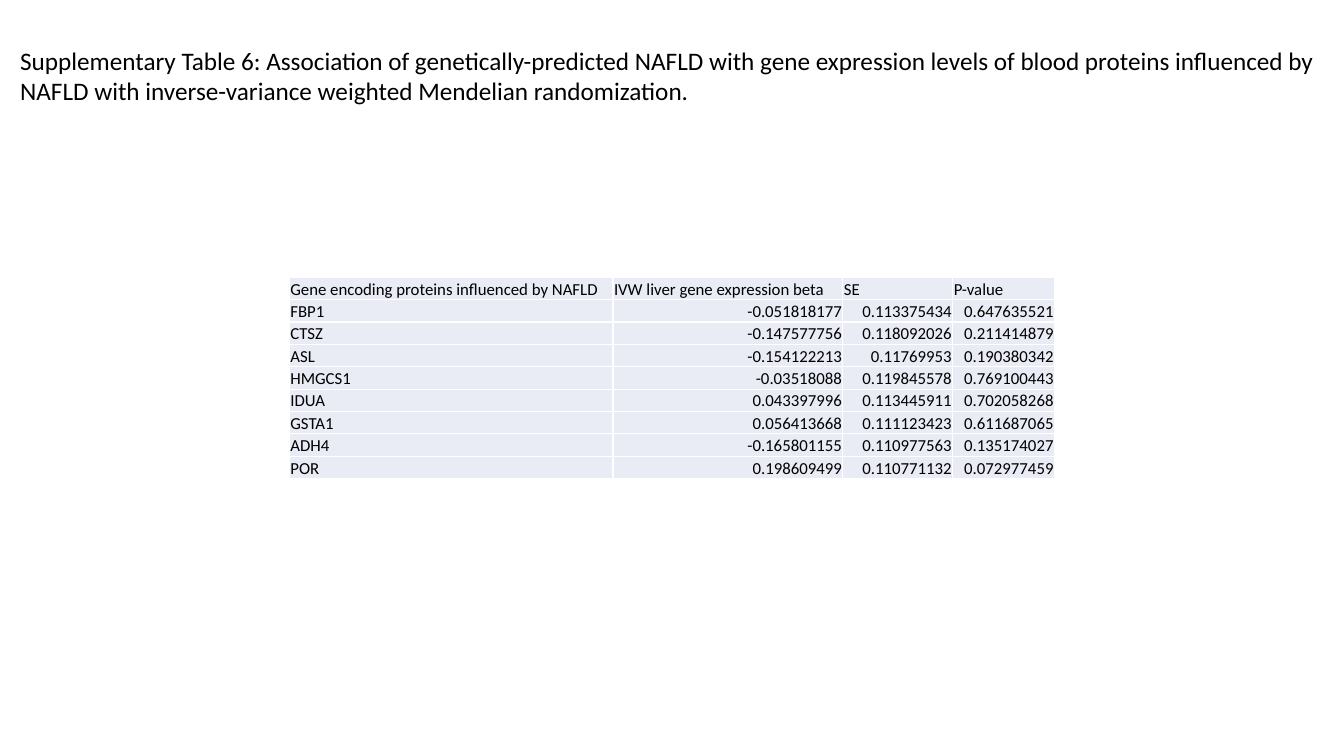
from typing import NamedTuple

from lxml import etree
from pptx import Presentation
from pptx.dml.color import RGBColor
from pptx.enum.text import MSO_ANCHOR, MSO_AUTO_SIZE, PP_ALIGN
from pptx.oxml.ns import qn
from pptx.util import Emu, Pt

LEFT, RIGHT = PP_ALIGN.LEFT, PP_ALIGN.RIGHT
TOP, BOTTOM = MSO_ANCHOR.TOP, MSO_ANCHOR.BOTTOM
FIT_SHAPE = MSO_AUTO_SIZE.SHAPE_TO_FIT_TEXT

EMU_PER_PX = 9144  # 100 px to the inch
FONT = "Calibri"
COLORS = {"text": "000000", "cell": "E9EBF5", "border": "FFFFFF"}
BORDER_WIDTH = Pt(1)

TITLE = (
    "Supplementary Table 6: Association of genetically-predicted NAFLD with gene "
    "expression levels of blood proteins influenced by NAFLD with inverse-variance "
    "weighted Mendelian randomization."
)


class Box(NamedTuple):
    left: int
    top: int
    width: int
    height: int


class Column(NamedTuple):
    heading: str
    width: int
    align: PP_ALIGN


class GeneResult(NamedTuple):
    gene: str
    beta: str
    standard_error: str
    p_value: str


TITLE_BOX = Box(10, 40, 1324, 71)
TABLE_BOX = Box(287, 275, 759, 200)

COLUMNS = [
    Column("Gene encoding proteins influenced by NAFLD", 321, LEFT),
    Column("IVW liver gene expression beta", 228, RIGHT),
    Column("SE", 109, RIGHT),
    Column("P-value", 101, RIGHT),
]

RESULTS = [
    GeneResult("FBP1", "-0.051818177", "0.113375434", "0.647635521"),
    GeneResult("CTSZ", "-0.147577756", "0.118092026", "0.211414879"),
    GeneResult("ASL", "-0.154122213", "0.11769953", "0.190380342"),
    GeneResult("HMGCS1", "-0.03518088", "0.119845578", "0.769100443"),
    GeneResult("IDUA", "0.043397996", "0.113445911", "0.702058268"),
    GeneResult("GSTA1", "0.056413668", "0.111123423", "0.611687065"),
    GeneResult("ADH4", "-0.165801155", "0.110977563", "0.135174027"),
    GeneResult("POR", "0.198609499", "0.110771132", "0.072977459"),
]


def px(length: float) -> Emu:
    return Emu(round(length * EMU_PER_PX))


def write_text(text_frame, text: str, *, size: int, align: PP_ALIGN = LEFT) -> None:
    paragraph = text_frame.paragraphs[0]
    paragraph.alignment = align
    run = paragraph.add_run()
    run.text = text
    run.font.name = FONT
    run.font.size = Pt(size)
    run.font.color.rgb = RGBColor.from_string(COLORS["text"])


def add_title(slide) -> None:
    title = slide.shapes.title
    title.left, title.top, title.width, title.height = map(px, TITLE_BOX)
    text_frame = title.text_frame
    text_frame.word_wrap = True
    text_frame.auto_size = FIT_SHAPE
    text_frame.vertical_anchor = TOP
    write_text(text_frame, TITLE, size=18)


def add_borders(cell) -> None:
    properties = cell._tc.get_or_add_tcPr()
    for index, side in enumerate(("a:lnL", "a:lnR", "a:lnT", "a:lnB")):
        line = etree.Element(qn(side), w=str(BORDER_WIDTH))
        fill = etree.SubElement(line, qn("a:solidFill"))
        etree.SubElement(fill, qn("a:srgbClr"), val=COLORS["border"])
        properties.insert(index, line)


def fill_cell(cell, text: str, align: PP_ALIGN) -> None:
    cell.margin_left = cell.margin_right = cell.margin_top = px(1)
    cell.margin_bottom = 0
    cell.vertical_anchor = BOTTOM
    cell.fill.solid()
    cell.fill.fore_color.rgb = RGBColor.from_string(COLORS["cell"])
    add_borders(cell)
    write_text(cell.text_frame, text, size=12, align=align)


def add_results_table(slide) -> None:
    row_count = len(RESULTS) + 1
    frame = slide.shapes.add_table(row_count, len(COLUMNS), *map(px, TABLE_BOX))
    table = frame.table
    table.first_row = table.horz_banding = False
    for row in table.rows:
        row.height = px(TABLE_BOX.height / row_count)
    for column_index, column in enumerate(COLUMNS):
        table.columns[column_index].width = px(column.width)
        fill_cell(table.cell(0, column_index), column.heading, LEFT)
        for row_index, result in enumerate(RESULTS, start=1):
            cell = table.cell(row_index, column_index)
            fill_cell(cell, result[column_index], column.align)


def main() -> None:
    presentation = Presentation()
    presentation.slide_width, presentation.slide_height = px(1333), px(750)
    title_only = presentation.slide_layouts.get_by_name("Title Only")
    slide = presentation.slides.add_slide(title_only)
    add_title(slide)
    add_results_table(slide)
    presentation.save("out.pptx")


if __name__ == "__main__":
    main()
